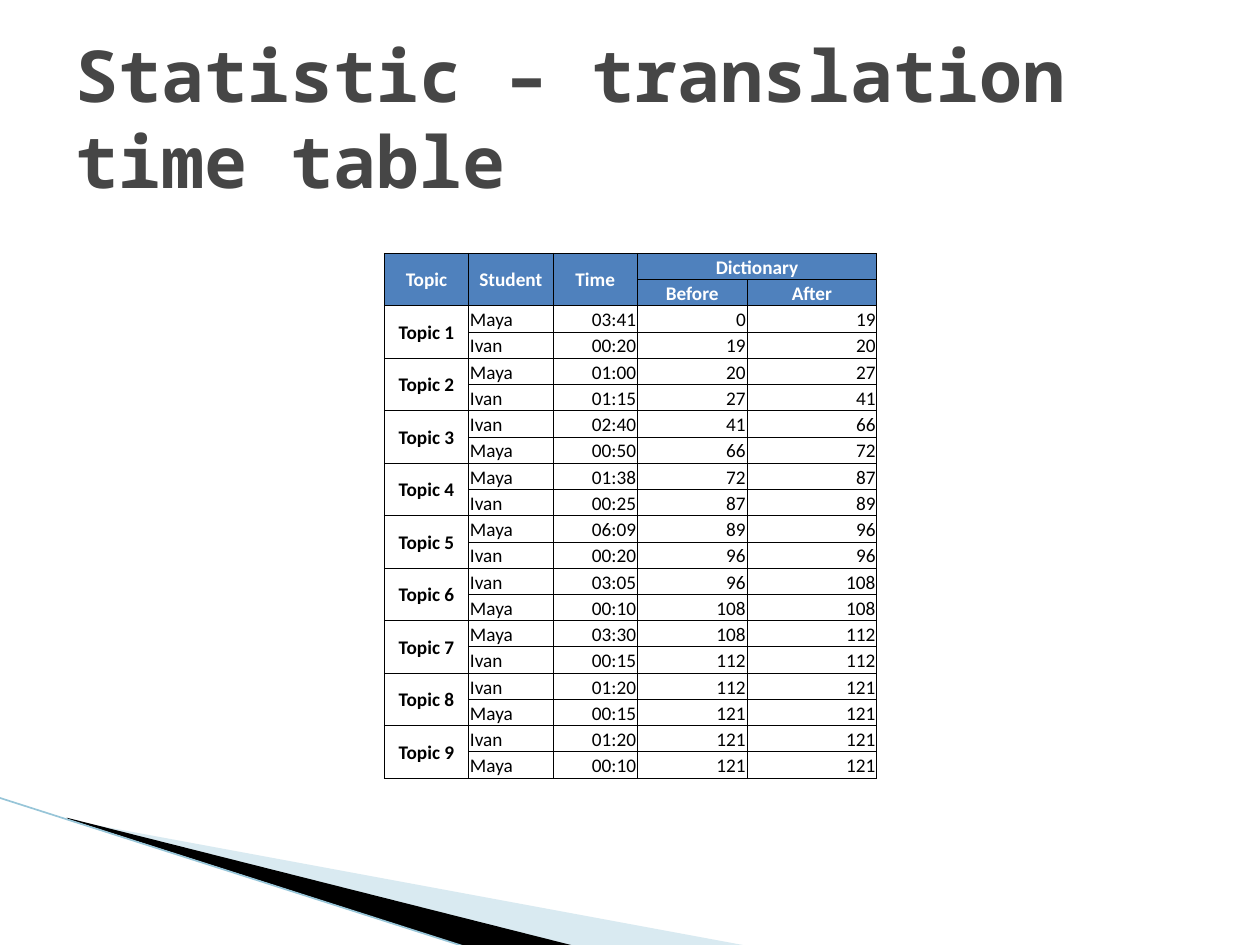
from lxml.etree import SubElement
from pptx import Presentation
from pptx.dml.color import RGBColor
from pptx.enum.shapes import MSO_CONNECTOR
from pptx.enum.text import MSO_ANCHOR as ANCHOR, PP_ALIGN as ALIGN
from pptx.oxml import parse_xml
from pptx.oxml.ns import nsdecls, qn
from pptx.util import Inches, Pt

TITLE = "Statistic – translation time table"
HEADINGS = ["Topic", "Student", "Time", "Dictionary"]
DICTIONARY_HEADINGS = ["Before", "After"]
# Two translations per topic: student, time, dictionary size before and after
TRANSLATIONS = [
    ("Maya", "03:41", 0, 19), ("Ivan", "00:20", 19, 20),
    ("Maya", "01:00", 20, 27), ("Ivan", "01:15", 27, 41),
    ("Ivan", "02:40", 41, 66), ("Maya", "00:50", 66, 72),
    ("Maya", "01:38", 72, 87), ("Ivan", "00:25", 87, 89),
    ("Maya", "06:09", 89, 96), ("Ivan", "00:20", 96, 96),
    ("Ivan", "03:05", 96, 108), ("Maya", "00:10", 108, 108),
    ("Maya", "03:30", 108, 112), ("Ivan", "00:15", 112, 112),
    ("Ivan", "01:20", 112, 121), ("Maya", "00:15", 121, 121),
    ("Ivan", "01:20", 121, 121), ("Maya", "00:10", 121, 121),
]
COLUMN_WIDTHS = [0.67, 0.67, 0.67, 0.87, 1.03]
TABLE_LEFT, TABLE_TOP, TABLE_HEIGHT = 3.05, 2.01, 4.17
HEADER_ROWS = 2
HEADER_BLUE, WHITE, BLACK = "4F81BD", "FFFFFF", "000000"

# Corner wedges: points, colour, opacity in percent
WEDGES = [
    ([(0.55, 6.51), (5.95, 7.51), (4.56, 7.51), (0.55, 6.5)], "A0CBDC", 40),
    ([(0.53, 6.49), (4.57, 7.51), (3.72, 7.52), (0.54, 6.5)], BLACK, 100),
]


def rgb(color):
    return RGBColor.from_string(color)


def write(frame, text, *, size=11, font="Calibri", color=BLACK, bold=False,
          align=ALIGN.LEFT):
    paragraph = frame.paragraphs[0]
    paragraph.alignment = align
    run = paragraph.add_run()
    run.text = str(text)
    run.font.size, run.font.name, run.font.bold = Pt(size), font, bold
    run.font.color.rgb = rgb(color)


def add_wedge(slide, points, color, opacity):
    start, *rest = [(Inches(x), Inches(y)) for x, y in points]
    builder = slide.shapes.build_freeform(*start)
    builder.add_line_segments(rest, close=True)
    wedge = builder.convert_to_shape()
    wedge.shadow.inherit = False
    wedge.line.fill.background()
    wedge.fill.solid()
    wedge.fill.fore_color.rgb = rgb(color)
    if opacity < 100:
        clr = wedge.fill._xPr.find(f".//{qn('a:srgbClr')}")
        SubElement(clr, qn("a:alpha"), val=str(opacity * 1000))


def add_edge_line(slide):
    edge = slide.shapes.add_connector(
        MSO_CONNECTOR.STRAIGHT, Inches(-0.01), Inches(6.33), Inches(3.71), Inches(7.52))
    edge.line.color.rgb = rgb("97C5D8")
    edge.line.width = Pt(0.95)
    SubElement(edge._element.spPr, qn("a:effectLst"))


def add_title(slide):
    box = slide.shapes.add_textbox(Inches(0.5), Inches(0.3), Inches(9), Inches(1.25))
    box.text_frame.word_wrap = True
    box.text_frame.vertical_anchor = ANCHOR.MIDDLE
    write(box.text_frame, TITLE, size=41, font="Noto Sans Mono", color="464646", bold=True)


def set_borders(cell):
    properties = cell._tc.get_or_add_tcPr()
    for position, side in enumerate(("lnL", "lnR", "lnT", "lnB")):
        properties.insert(position, parse_xml(
            f'<a:{side} {nsdecls("a")} w="{Pt(0.5)}"><a:solidFill>'
            f'<a:srgbClr val="{BLACK}"/></a:solidFill></a:{side}>'))


def fill_cell(cell, text, anchor=ANCHOR.BOTTOM, **text_format):
    cell.vertical_anchor = anchor
    write(cell.text_frame, text, **text_format)


def add_time_table(slide):
    row_count = HEADER_ROWS + len(TRANSLATIONS)
    table = slide.shapes.add_table(
        row_count, len(COLUMN_WIDTHS), Inches(TABLE_LEFT), Inches(TABLE_TOP),
        Inches(sum(COLUMN_WIDTHS)), Inches(TABLE_HEIGHT)).table
    table.first_row = table.horz_banding = False
    for column, width in zip(table.columns, COLUMN_WIDTHS):
        column.width = Inches(width)
    for r, row in enumerate(table.rows):
        row.height = Inches(TABLE_HEIGHT / row_count)
        for cell in row.cells:
            cell.margin_left = cell.margin_right = cell.margin_top = Inches(0.01)
            cell.margin_bottom = 0
            if r < HEADER_ROWS:
                cell.fill.solid()
                cell.fill.fore_color.rgb = rgb(HEADER_BLUE)
            else:
                cell.fill.background()
            set_borders(cell)

    heading = dict(color=WHITE, bold=True, align=ALIGN.CENTER)
    for c, text in enumerate(HEADINGS):
        if text == "Dictionary":
            table.cell(0, c).merge(table.cell(0, c + 1))
            fill_cell(table.cell(0, c), text, **heading)
            for offset, part in enumerate(DICTIONARY_HEADINGS):
                fill_cell(table.cell(1, c + offset), part, **heading)
        else:
            table.cell(0, c).merge(table.cell(1, c))
            fill_cell(table.cell(0, c), text, ANCHOR.MIDDLE, **heading)

    for i, (student, *values) in enumerate(TRANSLATIONS):
        r = HEADER_ROWS + i
        if i % 2 == 0:
            table.cell(r, 0).merge(table.cell(r + 1, 0))
            fill_cell(table.cell(r, 0), f"Topic {i // 2 + 1}", ANCHOR.MIDDLE,
                      bold=True, align=ALIGN.CENTER)
        fill_cell(table.cell(r, 1), student)
        for c, value in enumerate(values, start=2):
            fill_cell(table.cell(r, c), value, align=ALIGN.RIGHT)


def main():
    deck = Presentation()
    deck.slide_width, deck.slide_height = Inches(10), Inches(7.5)
    slide = deck.slides.add_slide(deck.slide_layouts[6])
    for wedge in WEDGES:
        add_wedge(slide, *wedge)
    add_edge_line(slide)
    add_title(slide)
    add_time_table(slide)
    deck.save("out.pptx")


if __name__ == "__main__":
    main()
